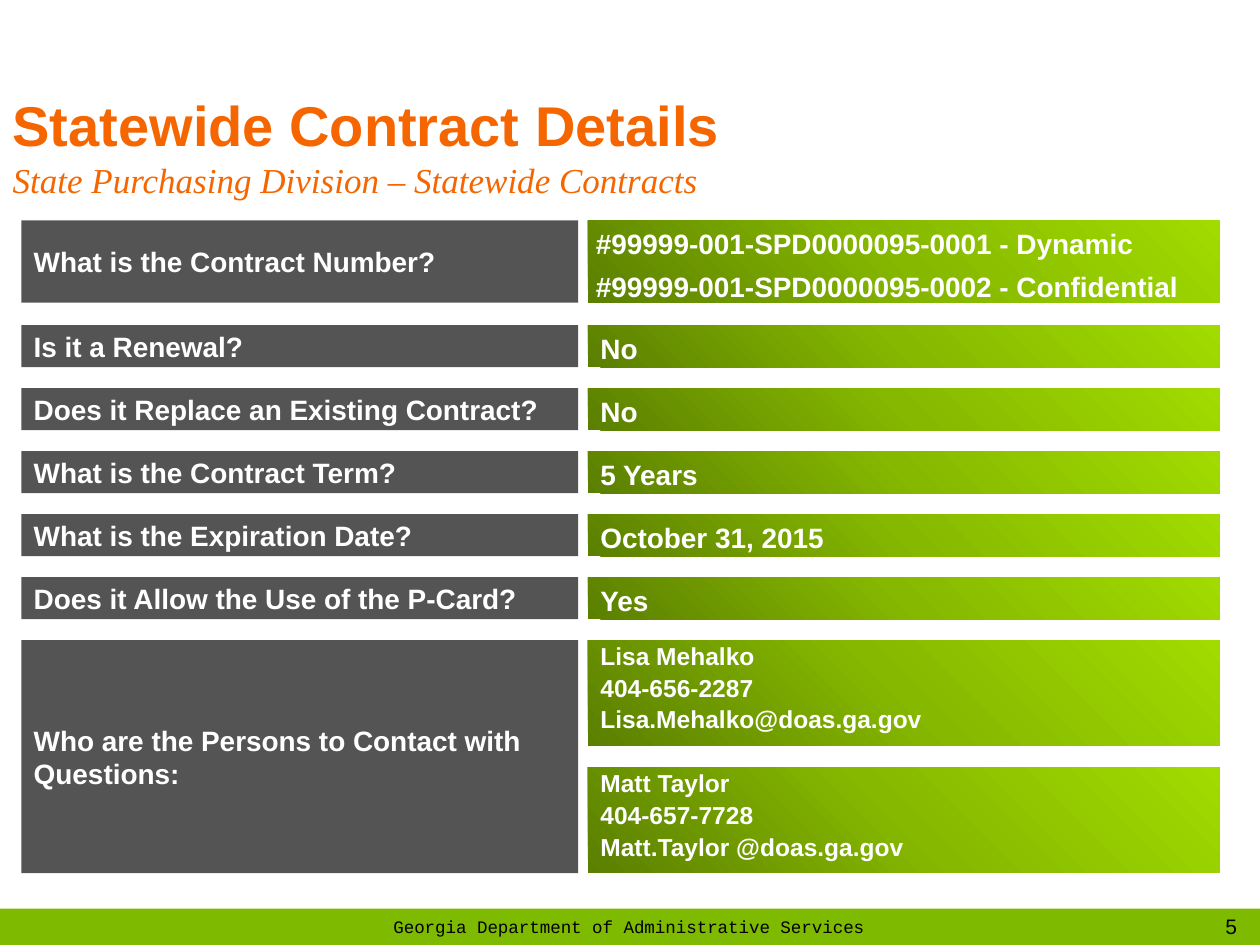
from copy import deepcopy

from lxml.etree import SubElement
from pptx import Presentation
from pptx.dml.color import RGBColor
from pptx.enum.shapes import MSO_SHAPE as Shape
from pptx.enum.text import MSO_ANCHOR as Anchor, MSO_AUTO_SIZE as AutoSize, PP_ALIGN as Align
from pptx.oxml.ns import qn
from pptx.util import Pt

COLORS = {
    "title": "F56600",
    "band": "7DBA00",
    "question": "000000",
    "answer_dark": "5B7F00",
    "answer_mid": "86B800",
    "answer_light": "A1DB00",
    "light_text": "FFFFFF",
    "dark_text": "000000",
}

QUESTION_LEFT, QUESTION_WIDTH = 12.2, 318.2
ANSWER_LEFT, ANSWER_WIDTH = 336, 361
FIRST_TOP, FIRST_HEIGHT = 126, 47
ROWS_TOP, ROW_PITCH, ROW_HEIGHT = 185.8, 36, 24
CONTACT_HEIGHT, CONTACT_PITCH = 60.5, 72.6

CONTRACT_NUMBERS = [
    "#99999-001-SPD0000095-0001 - Dynamic",
    "#99999-001-SPD0000095-0002 - Confidential",
]
DETAILS = [
    ("Is it a Renewal?", "No"),
    ("Does it Replace an Existing Contract?", "No"),
    ("What is the Contract Term?", "5 Years"),
    ("What is the Expiration Date?", "October 31, 2015"),
    ("Does it Allow the Use of the P-Card?", "Yes"),
]
CONTACTS = [
    ["Lisa Mehalko", "404-656-2287", "Lisa.Mehalko@doas.ga.gov"],
    ["Matt Taylor", "404-657-7728", "Matt.Taylor @doas.ga.gov"],
]


def color(name):
    return RGBColor.from_string(COLORS[name])


def style_font(font, size, color_name, face="Arial", bold=False, italic=False):
    font.name, font.size = face, Pt(size)
    font.bold, font.italic = bold, italic
    font.color.rgb = color(color_name)


def add_box(slide, left, top, width, height):
    box = slide.shapes.add_shape(
        Shape.RECTANGLE, Pt(left), Pt(top), Pt(width), Pt(height))
    box.shadow.inherit = False
    box.line.fill.background()
    box.text_frame.word_wrap = True
    return box


def fill_solid(box, color_name, opacity=100):
    box.fill.solid()
    box.fill.fore_color.rgb = color(color_name)
    if opacity < 100:
        rgb = box.fill._xPr.find(qn("a:solidFill"))[0]
        SubElement(rgb, qn("a:alpha"), val=str(opacity * 1000))


def fill_gradient(box):
    box.fill.gradient()
    box.fill.gradient_angle = 45
    stop_list = box.fill._xPr.find(qn("a:gradFill")).find(qn("a:gsLst"))
    stop_list.insert(1, deepcopy(stop_list[0]))
    shades = ("answer_dark", "answer_mid", "answer_light")
    for index, (stop, shade) in enumerate(zip(box.fill.gradient_stops, shades)):
        stop.position = index / 2
        stop.color.rgb = color(shade)


def add_question(slide, top, height, text):
    question = add_box(slide, QUESTION_LEFT, top, QUESTION_WIDTH, height)
    fill_solid(question, "question", 67)
    frame = question.text_frame
    frame.vertical_anchor = Anchor.MIDDLE
    frame.text = text
    frame.paragraphs[0].alignment = Align.LEFT
    style_font(frame.paragraphs[0].runs[0].font, 16, "light_text", bold=True)


def add_answer(slide, top, height, lines, size=16, line_spacing=1.0, inset=7.2):
    answer = add_box(slide, ANSWER_LEFT, top, ANSWER_WIDTH, height)
    fill_gradient(answer)
    frame = answer.text_frame
    frame.vertical_anchor = Anchor.TOP
    frame.margin_left, frame.margin_right = Pt(inset), Pt(0)
    frame.text = "\n".join(lines)
    for line in frame.paragraphs:
        line.alignment = Align.LEFT
        line.line_spacing = line_spacing
        line.space_after = Pt(round(size * 0.34, 1))
        style_font(line.runs[0].font, size, "light_text", bold=True)


def add_footer_text(slide, left, top, width, height, text, size, face):
    label = slide.shapes.add_textbox(Pt(left), Pt(top), Pt(width), Pt(height))
    frame = label.text_frame
    frame.word_wrap = True
    frame.text = text
    frame.paragraphs[0].alignment = Align.CENTER
    style_font(frame.paragraphs[0].runs[0].font, size, "dark_text", face)


def add_footer(slide):
    band = add_box(slide, 0, 519.2, 720, 20.8)
    fill_solid(band, "band")
    add_footer_text(slide, 687, 518.4, 33, 21.6, "5", 12, "Arial")
    add_footer_text(slide, 215.3, 520, 288, 20,
                    "Georgia Department of Administrative Services", 10, "Courier New")


def set_title(slide):
    title = slide.shapes.title
    title.left, title.top, title.width, title.height = Pt(0), Pt(53.3), Pt(593.3), Pt(59.8)
    frame = title.text_frame
    frame.auto_size = AutoSize.NONE
    frame.vertical_anchor = Anchor.MIDDLE
    frame.text = "Statewide Contract Details\vState Purchasing Division – Statewide Contracts"
    frame.paragraphs[0].alignment = Align.LEFT
    heading, division = frame.paragraphs[0].runs
    style_font(heading.font, 32, "title", bold=True)
    style_font(division.font, 20, "title", "Times New Roman", italic=True)


def main():
    deck = Presentation()
    deck.slide_width, deck.slide_height = Pt(720), Pt(540)
    slide = deck.slides.add_slide(deck.slide_layouts[5])
    set_title(slide)
    add_footer(slide)

    add_question(slide, FIRST_TOP, FIRST_HEIGHT, "What is the Contract Number?")
    add_answer(slide, FIRST_TOP, FIRST_HEIGHT, CONTRACT_NUMBERS, inset=4.5)

    for row, (question, answer) in enumerate(DETAILS):
        top = ROWS_TOP + row * ROW_PITCH
        add_question(slide, top, ROW_HEIGHT, question)
        add_answer(slide, top, ROW_HEIGHT, [answer])

    contacts_top = ROWS_TOP + len(DETAILS) * ROW_PITCH
    add_question(slide, contacts_top, CONTACT_PITCH + CONTACT_HEIGHT,
                 "Who are the Persons to Contact with Questions:")
    for index, contact in enumerate(CONTACTS):
        add_answer(slide, contacts_top + index * CONTACT_PITCH, CONTACT_HEIGHT,
                   contact, size=14, line_spacing=0.8)

    deck.save("out.pptx")


if __name__ == "__main__":
    main()
